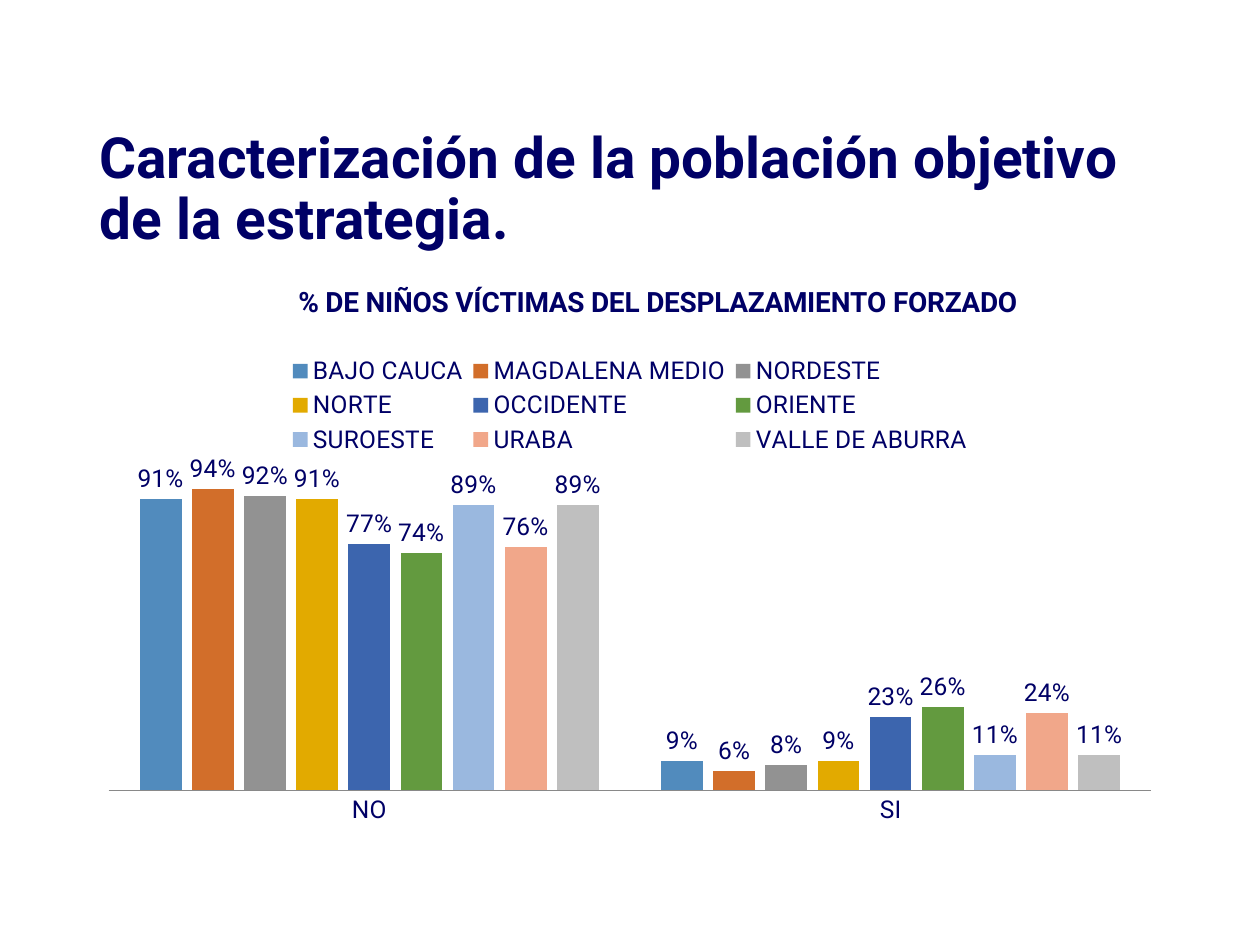
from typing import NamedTuple

from lxml import etree
from pptx import Presentation
from pptx.chart.data import CategoryChartData
from pptx.dml.color import RGBColor
from pptx.enum.chart import XL_CHART_TYPE, XL_LABEL_POSITION, XL_LEGEND_POSITION, XL_TICK_MARK
from pptx.enum.text import MSO_ANCHOR, MSO_AUTO_SIZE, PP_ALIGN
from pptx.oxml.ns import qn
from pptx.util import Cm, Pt

COLUMNS = XL_CHART_TYPE.COLUMN_CLUSTERED
OUTSIDE_END = XL_LABEL_POSITION.OUTSIDE_END
LEGEND_TOP = XL_LEGEND_POSITION.TOP
NO_TICK = XL_TICK_MARK.NONE
MIDDLE = MSO_ANCHOR.MIDDLE
NO_AUTOFIT = MSO_AUTO_SIZE.NONE
LEFT = PP_ALIGN.LEFT

FONT = "Roboto"
NAVY = "000066"
TITLE_ONLY = 5


class Region(NamedTuple):
    name: str
    no: float
    yes: float
    color: str


REGIONS = [
    Region("BAJO CAUCA", 0.91, 0.09, "518BBD"),
    Region("MAGDALENA MEDIO", 0.94, 0.06, "D26E2A"),
    Region("NORDESTE", 0.92, 0.08, "929292"),
    Region("NORTE", 0.91, 0.09, "E2AA00"),
    Region("OCCIDENTE", 0.77, 0.23, "3C65AE"),
    Region("ORIENTE", 0.74, 0.26, "639A3F"),
    Region("SUROESTE", 0.89, 0.11, "9AB8DF"),
    Region("URABA", 0.76, 0.24, "F1A78A"),
    Region("VALLE DE ABURRA", 0.89, 0.11, "BFBFBF"),
]


def rgb(color: str) -> RGBColor:
    return RGBColor.from_string(color)


def format_font(font, size: float, bold: bool = False) -> None:
    font.name, font.size, font.bold = FONT, Pt(size), bold
    font.color.rgb = rgb(NAVY)


def write(tf, text: str, *, size: float, bold: bool = False, line_spacing: float | None = None) -> None:
    tf.text = text
    p = tf.paragraphs[0]
    p.alignment = LEFT
    p.line_spacing = line_spacing
    format_font(p.runs[0].font, size, bold)


def place(part, after: str | None = None, inner: bool = False, **fractions: float) -> None:
    """Set a chart part's manual layout, as fractions of the chart's size."""
    for old in part.findall(qn("c:layout")):
        part.remove(old)
    layout = etree.Element(qn("c:layout"))
    manual = etree.SubElement(layout, qn("c:manualLayout"))
    settings = {"layoutTarget": "inner"} if inner else {}
    settings |= {"xMode": "edge", "yMode": "edge"}
    settings |= {key: str(value) for key, value in fractions.items()}
    for tag, value in settings.items():
        etree.SubElement(manual, qn(f"c:{tag}")).set("val", value)
    if after:
        part.find(qn(after)).addnext(layout)
    else:
        part.insert(0, layout)


def add_title(s) -> None:
    title = s.shapes.title
    title.left, title.top, title.width, title.height = Cm(1.75), Cm(3.58), Cm(21.9), Cm(1.93)
    tf = title.text_frame
    tf.word_wrap, tf.auto_size, tf.vertical_anchor = True, NO_AUTOFIT, MIDDLE
    tf.margin_bottom = Cm(1.52)
    write(tf, "Caracterización de la población objetivo de la estrategia.",
          size=32.4, bold=True, line_spacing=0.9)


def add_region_chart(s) -> None:
    data = CategoryChartData(number_format="0%")
    data.categories = ["NO", "SI"]
    for region in REGIONS:
        data.add_series(region.name, (region.no, region.yes))
    chart = s.shapes.add_chart(COLUMNS, Cm(1.75), Cm(5.51), Cm(21.9), Cm(11.33), data).chart
    format_font(chart.font, 14)

    chart.has_title = True
    write(chart.chart_title.text_frame, "% DE NIÑOS VÍCTIMAS DEL DESPLAZAMIENTO FORZADO",
          size=16, bold=True)
    chart.has_legend = True
    chart.legend.position = LEGEND_TOP
    chart.legend.include_in_layout = False

    plot = chart.plots[0]
    plot.gap_width, plot.overlap, plot.vary_by_categories = 150, -25, False
    for series, region in zip(plot.series, REGIONS):
        series.format.fill.solid()
        series.format.fill.fore_color.rgb = rgb(region.color)
        labels = series.data_labels
        labels.show_value, labels.position = True, OUTSIDE_END
        labels.number_format, labels.number_format_is_linked = "0%", False
        format_font(labels.font, 14)

    axis = chart.category_axis
    axis.major_tick_mark = axis.minor_tick_mark = NO_TICK
    axis.format.line.color.rgb = rgb("898989")
    axis.format.line.width = Pt(0.75)
    values = chart.value_axis
    values.minimum_scale, values.maximum_scale = 0, 1
    values.has_major_gridlines = values.visible = False

    place(chart.chart_title._element, after="c:tx", x=0.19, y=0.01)
    place(chart.legend._element, after="c:legendPos", x=0.18, y=0.14, w=0.64, h=0.19)
    place(chart.element.find(f".//{qn('c:plotArea')}"), inner=True, x=0.02, y=0.35, w=0.96, h=0.57)


def main() -> None:
    prs = Presentation()
    prs.slide_width, prs.slide_height = Cm(25.4), Cm(19.05)
    s = prs.slides.add_slide(prs.slide_layouts[TITLE_ONLY])
    add_title(s)
    add_region_chart(s)
    prs.save("out.pptx")


if __name__ == "__main__":
    main()
